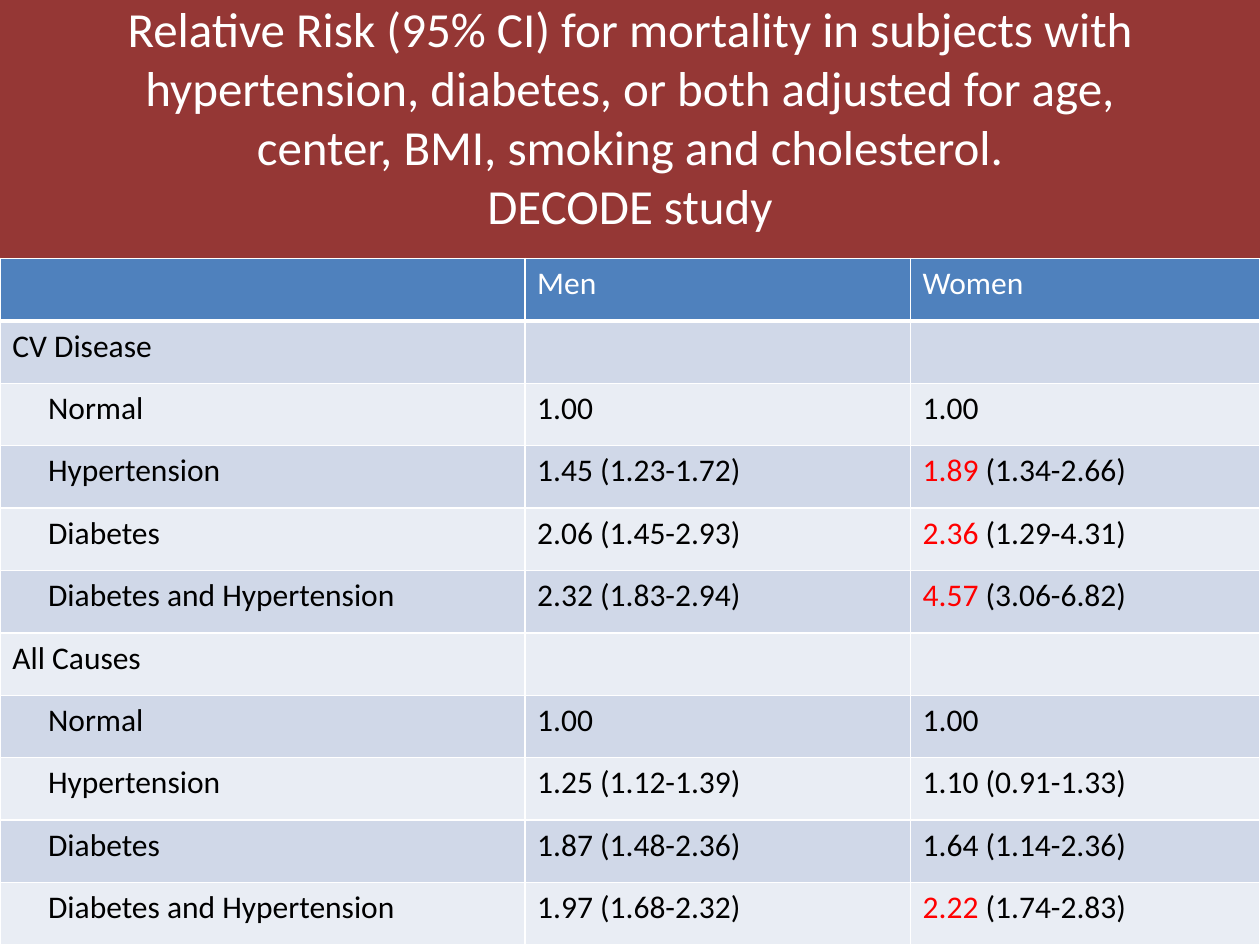
from lxml.etree import SubElement
from pptx import Presentation
from pptx.dml.color import RGBColor
from pptx.enum.text import MSO_ANCHOR, MSO_AUTO_SIZE, PP_ALIGN
from pptx.oxml.ns import qn
from pptx.util import Cm, Pt

BRICK = RGBColor(0x95, 0x37, 0x35)
BLUE = RGBColor(0x4F, 0x81, 0xBD)
BAND_DARK = RGBColor(0xD0, 0xD8, 0xE8)
BAND_LIGHT = RGBColor(0xE9, 0xED, 0xF4)
WHITE = RGBColor(0xFF, 0xFF, 0xFF)
BLACK = RGBColor(0x00, 0x00, 0x00)
RED = RGBColor(0xFF, 0x00, 0x00)

TITLE_LINES = (
    "Relative Risk (95% CI) for mortality in subjects with hypertension, "
    "diabetes, or both adjusted for age, center, BMI, smoking and cholesterol.",
    "DECODE study",
)
COLUMN_WIDTHS = (Cm(10.58), Cm(7.77), Cm(7.05))
CELL_MARGIN = Cm(0.25)
SUBROW_MARGIN = Cm(0.97)
ROWS = (
    ("", "Men", "Women"),
    ("CV Disease", "", ""),
    ("Normal", "1.00", "1.00"),
    ("Hypertension", "1.45 (1.23-1.72)", "1.89 (1.34-2.66)"),
    ("Diabetes", "2.06 (1.45-2.93)", "2.36 (1.29-4.31)"),
    ("Diabetes and Hypertension", "2.32 (1.83-2.94)", "4.57 (3.06-6.82)"),
    ("All Causes", "", ""),
    ("Normal", "1.00", "1.00"),
    ("Hypertension", "1.25 (1.12-1.39)", "1.10 (0.91-1.33)"),
    ("Diabetes", "1.87 (1.48-2.36)", "1.64 (1.14-2.36)"),
    ("Diabetes and Hypertension", "1.97 (1.68-2.32)", "2.22 (1.74-2.83)"),
)
HIGHLIGHTS = ("1.89", "2.36", "4.57", "2.22")


def set_attributes(target, values):
    """Set each named value on the target."""
    for name, value in values.items():
        setattr(target, name, value)


def add_span(para, text, size, color):
    """Add a run of text in the slide's font."""
    span = para.add_run()
    span.text = text
    set_attributes(span.font, {"name": "Calibri", "size": Pt(size)})
    span.font.color.rgb = color


def add_title(page):
    """Place and fill the title placeholder."""
    box = page.shapes.title
    set_attributes(box, {"left": Cm(1.27), "top": Cm(0.76),
                         "width": Cm(22.86), "height": Cm(3.18)})
    set_attributes(box.text_frame, {"word_wrap": True,
                                    "auto_size": MSO_AUTO_SIZE.NONE,
                                    "vertical_anchor": MSO_ANCHOR.MIDDLE})
    para = box.text_frame.paragraphs[0]
    para.alignment = PP_ALIGN.CENTER
    for index, line in enumerate(TITLE_LINES):
        if index:
            para.add_line_break()
        add_span(para, line, 28, WHITE)


def add_borders(cell, bottom_width):
    """Draw white lines on the four sides of a cell."""
    properties = cell._tc.get_or_add_tcPr()
    widths = {"a:lnL": 1, "a:lnR": 1, "a:lnT": 1, "a:lnB": bottom_width}
    for tag, width in widths.items():
        line = SubElement(properties, qn(tag), w=str(Pt(width)))
        fill = SubElement(line, qn("a:solidFill"))
        SubElement(fill, qn("a:srgbClr"), val=str(WHITE))


def fill_cell(cell, text, background, color):
    """Fill a cell and write its text, with a highlighted ratio in red."""
    cell.fill.solid()
    cell.fill.fore_color.rgb = background
    para = cell.text_frame.paragraphs[0]
    ratio, gap, interval = text.partition(" ")
    if ratio in HIGHLIGHTS:
        add_span(para, ratio, 18, RED)
        add_span(para, gap + interval, 18, color)
    elif text:
        add_span(para, text, 18, color)


def add_risk_table(page):
    """Add the table of relative risks."""
    frame = page.shapes.add_table(len(ROWS), len(COLUMN_WIDTHS), Cm(0),
                                  Cm(5.21), sum(COLUMN_WIDTHS), Cm(13.84))
    table = frame.table
    for column, width in zip(table.columns, COLUMN_WIDTHS):
        column.width = width
    for row_index, texts in enumerate(ROWS):
        header = row_index == 0
        band = BAND_DARK if row_index % 2 else BAND_LIGHT
        for column_index, text in enumerate(texts):
            cell = table.cell(row_index, column_index)
            subrow = column_index == 0 and texts[1] and not header
            cell.margin_left = SUBROW_MARGIN if subrow else CELL_MARGIN
            add_borders(cell, 3 if header else 1)
            fill_cell(cell, text, BLUE if header else band,
                      WHITE if header else BLACK)


def main():
    """Build and save the slide."""
    deck = Presentation()
    set_attributes(deck, {"slide_width": Cm(25.4), "slide_height": Cm(19.05)})
    page = deck.slides.add_slide(deck.slide_layouts[5])
    page.background.fill.solid()
    page.background.fill.fore_color.rgb = BRICK
    add_title(page)
    add_risk_table(page)
    deck.save("out.pptx")


if __name__ == "__main__":
    main()
